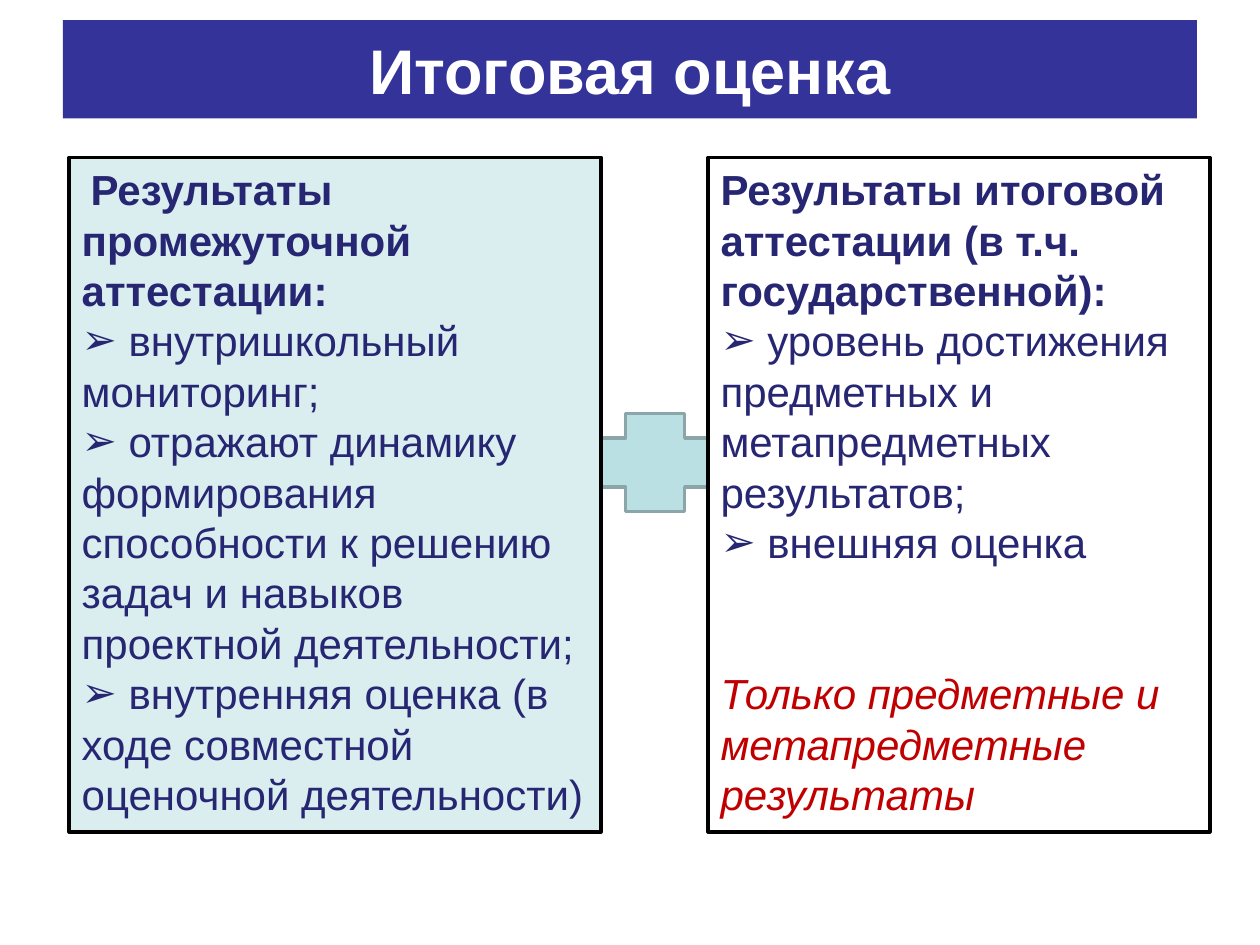
from lxml.etree import SubElement
from pptx import Presentation
from pptx.dml.color import RGBColor
from pptx.enum.shapes import MSO_SHAPE
from pptx.enum.text import MSO_ANCHOR, PP_ALIGN
from pptx.oxml.ns import qn
from pptx.util import Inches, Pt

NAVY, RED, BLACK = "262673", "C00000", "000000"


def rgb(value):
    """Turn a hex string into a colour."""
    return RGBColor.from_string(value)


def add_box(s, kind, box, fill=None, line=None, width=0):
    """Add a shape without shadow in the given box of inches."""
    sp = s.shapes.add_shape(kind, *map(Inches, box))
    sp.shadow.inherit = False
    if fill:
        sp.fill.solid()
        sp.fill.fore_color.rgb = rgb(fill)
    else:
        sp.fill.background()
    if line:
        sp.line.color.rgb = rgb(line)
        sp.line.width = Pt(width)
    else:
        sp.line.fill.background()
    return sp


def add_run(p, text, size, color, bold=False, italic=False):
    """Add one formatted run."""
    r = p.add_run()
    r.text = text
    r.font.name = "Arial"
    r.font.size = Pt(size)
    r.font.bold = bold
    r.font.italic = italic
    r.font.color.rgb = rgb(color)


def add_bullet(p):
    """Give the paragraph an arrow bullet."""
    pPr = p._p.get_or_add_pPr()
    SubElement(pPr, qn("a:buFont"), typeface="Arial")
    SubElement(pPr, qn("a:buChar"), char="➢")


def add_title(s, box, text):
    """Place the title band."""
    tf = add_box(s, MSO_SHAPE.RECTANGLE, box, "333399").text_frame
    tf.word_wrap = True
    tf.vertical_anchor = MSO_ANCHOR.MIDDLE
    p = tf.paragraphs[0]
    p.alignment = PP_ALIGN.CENTER
    add_run(p, text, 36, "FFFFFF", bold=True)


def add_panel(s, box, heading, items, fill=None, note=None, indent=0):
    """Place a framed panel with a heading, bullets and an optional note."""
    tf = add_box(s, MSO_SHAPE.RECTANGLE, box, fill, BLACK, 2.25).text_frame
    tf.word_wrap = True
    tf.vertical_anchor = MSO_ANCHOR.TOP
    p = tf.paragraphs[0]
    p.alignment = PP_ALIGN.LEFT
    p._p.get_or_add_pPr().set("indent", str(Inches(indent)))
    add_run(p, heading, 24, NAVY, bold=True)
    for item in items:
        p = tf.add_paragraph()
        p.alignment = PP_ALIGN.LEFT
        add_bullet(p)
        add_run(p, " " + item, 24, NAVY)
    if note:
        p = tf.add_paragraph()
        p.alignment = PP_ALIGN.LEFT
        p.space_before = Pt(57.6)
        add_run(p, note, 24, RED, italic=True)


def main():
    """Build the slide and save it."""
    prs = Presentation()
    prs.slide_width, prs.slide_height = Inches(10), Inches(7.5)
    s = prs.slides.add_slide(prs.slide_layouts[6])
    add_title(s, (0.5, 0.16, 9, 0.78), "Итоговая оценка")
    add_box(s, MSO_SHAPE.CROSS, (4.77, 3.28, 0.86, 0.78), "BBE0E3", "8AA6A8", 2)
    add_panel(
        s, (0.55, 1.25, 4.22, 5.35),
        "Результаты промежуточной аттестации:",
        ["внутришкольный мониторинг;",
         "отражают динамику формирования способности к решению задач "
         "и навыков проектной деятельности;",
         "внутренняя оценка (в ходе совместной оценочной деятельности)"],
        fill="DAEDEF", indent=0.07)
    add_panel(
        s, (5.62, 1.25, 3.98, 5.35),
        "Результаты итоговой аттестации (в т.ч. государственной):",
        ["уровень достижения предметных и метапредметных результатов;",
         "внешняя оценка"],
        fill="FFFFFF", note="Только предметные и метапредметные результаты")
    prs.save("out.pptx")


if __name__ == "__main__":
    main()
